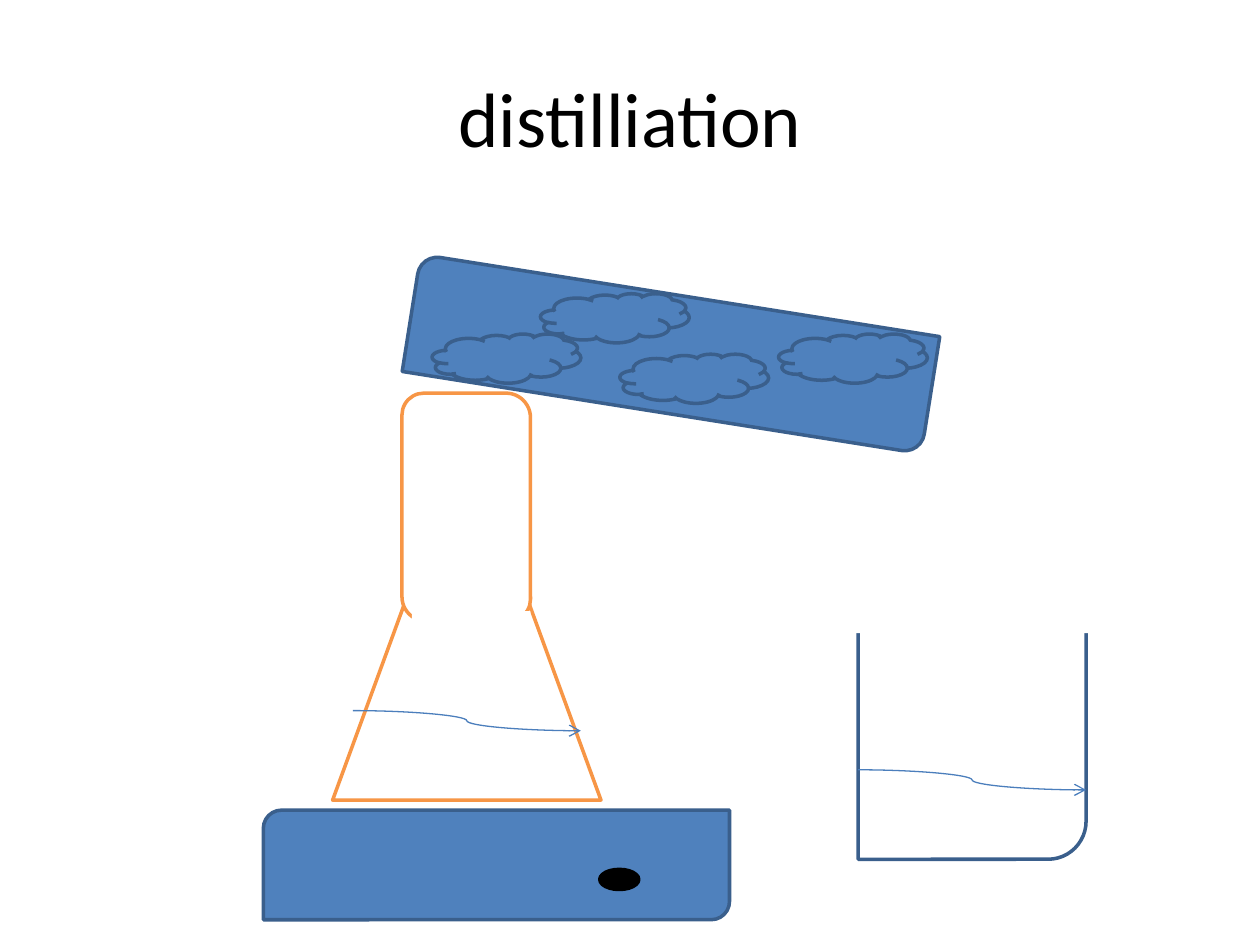
"""Build a slide that sketches a distillation apparatus."""
import pptx
import pptx.util
import pptx.dml.color
import pptx.enum.shapes
import pptx.enum.text
import pptx.oxml.ns
import lxml.etree

Inches = pptx.util.Inches
Pt = pptx.util.Pt
SHAPE = pptx.enum.shapes.MSO_SHAPE
DIAGONAL = SHAPE.ROUND_2_DIAG_RECTANGLE
BLUE, NAVY, ORANGE, WHITE, BLACK = "4F81BD", "3A5F8C", "F79646", "FFFFFF", "000000"


def color(value):
    """Turn a hex string into a colour."""
    return pptx.dml.color.RGBColor.from_string(value)


def add_part(kind, left, top, width, height, fill, line):
    """Add one part of the apparatus, with no fill or line where None is given."""
    part = slide.shapes.add_shape(kind, Inches(left), Inches(top), Inches(width), Inches(height))
    part.shadow.inherit = False
    for paint, value in ((part.fill, fill), (part.line.fill, line)):
        if value:
            paint.solid()
            paint.fore_color.rgb = color(value)
        else:
            paint.background()
    if line:
        part.line.width = Pt(2)
    return part


presentation = pptx.Presentation()
presentation.slide_width = Inches(10)
presentation.slide_height = Inches(7.5)
slide = presentation.slides.add_slide(presentation.slide_layouts[5])

title = slide.shapes.title
title.left, title.top, title.width, title.height = Inches(0.5), Inches(0.3), Inches(9), Inches(1.25)
title.text_frame.text = "distilliation"
title.text_frame.vertical_anchor = pptx.enum.text.MSO_ANCHOR.MIDDLE
heading = title.text_frame.paragraphs[0]
heading.alignment = pptx.enum.text.PP_ALIGN.CENTER
heading.runs[0].font.name = "Calibri"
heading.runs[0].font.size = Pt(44)
heading.runs[0].font.color.rgb = color(BLACK)

add_part(DIAGONAL, 2.09, 6.43, 3.7, 0.87, BLUE, NAVY)
add_part(SHAPE.OVAL, 4.76, 6.9, 0.31, 0.16, BLACK, BLACK)

add_part(SHAPE.FLOWCHART_EXTRACT, 2.64, 3.44, 2.13, 2.91, WHITE, ORANGE)
flask_neck = add_part(DIAGONAL, 3.19, 3.12, 1.02, 1.81, WHITE, ORANGE)
flask_neck.adjustments[0] = 0.17
flask_neck.adjustments[1] = 0.19
add_part(DIAGONAL, 3.27, 4.85, 0.94, 0.16, WHITE, None)

condenser = add_part(DIAGONAL, 3.24, 2.34, 4.17, 0.94, BLUE, NAVY)
condenser.rotation = 9

add_part(DIAGONAL, 6.81, 4.62, 1.81, 2.2, None, NAVY)
add_part(DIAGONAL, 6.65, 4.46, 2.68, 0.55, WHITE, WHITE)

for left, top in ((6.81, 6.11), (2.8, 5.64)):
    liquid_level = slide.shapes.add_connector(
        pptx.enum.shapes.MSO_CONNECTOR.CURVE,
        Inches(left), Inches(top), Inches(left + 1.81), Inches(top + 0.16))
    liquid_level.line.color.rgb = color("4B7EBC")
    liquid_level.line.width = Pt(0.75)
    arrowhead = lxml.etree.SubElement(liquid_level.line._get_or_add_ln(), pptx.oxml.ns.qn("a:tailEnd"))
    arrowhead.set("type", "arrow")
    lxml.etree.SubElement(liquid_level._element.spPr, pptx.oxml.ns.qn("a:effectLst"))

for left, top in ((3.43, 2.65), (4.92, 2.81), (4.29, 2.33), (6.18, 2.65)):
    add_part(SHAPE.CLOUD, left, top, 1.18, 0.39, BLUE, NAVY)

presentation.save("out.pptx")
